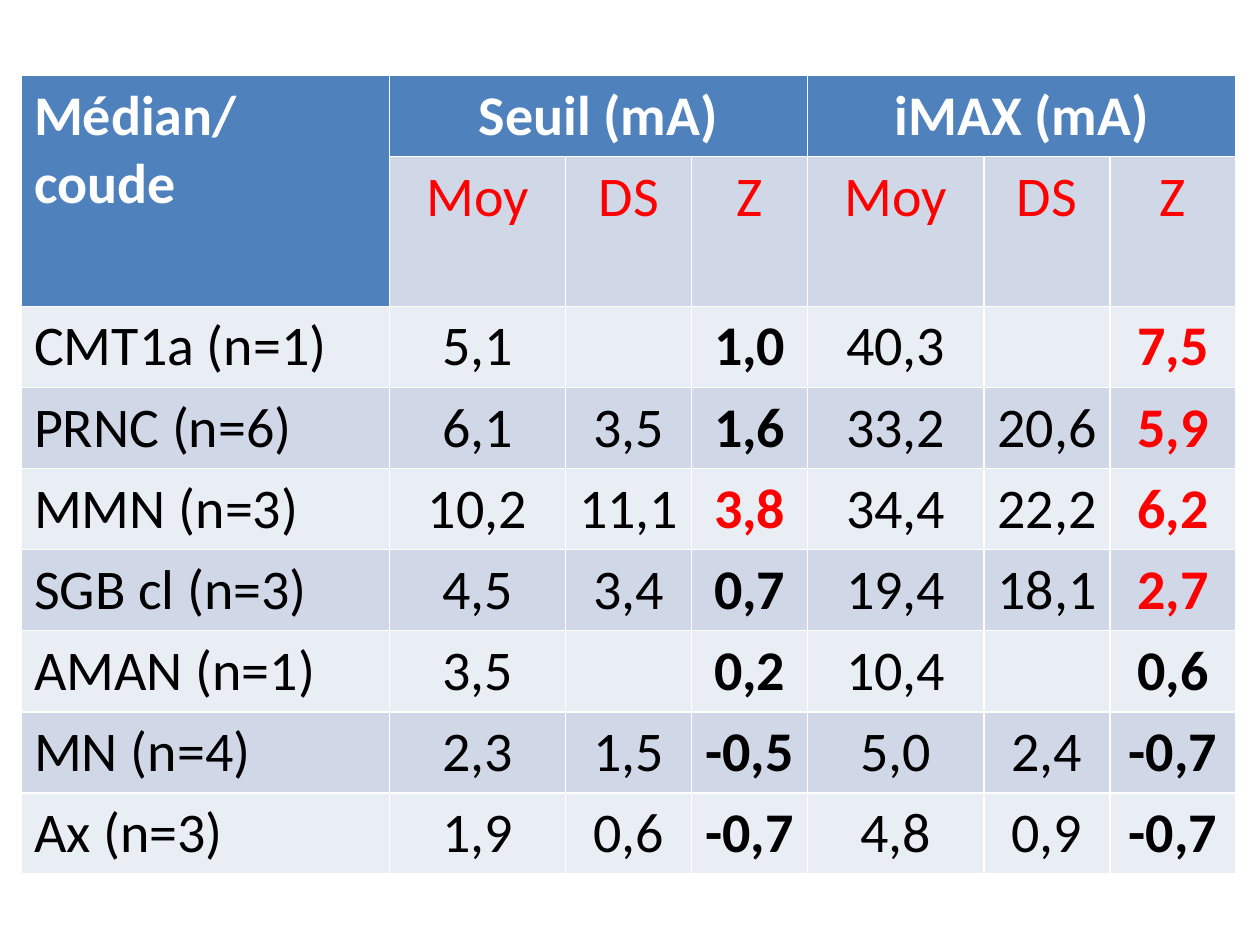
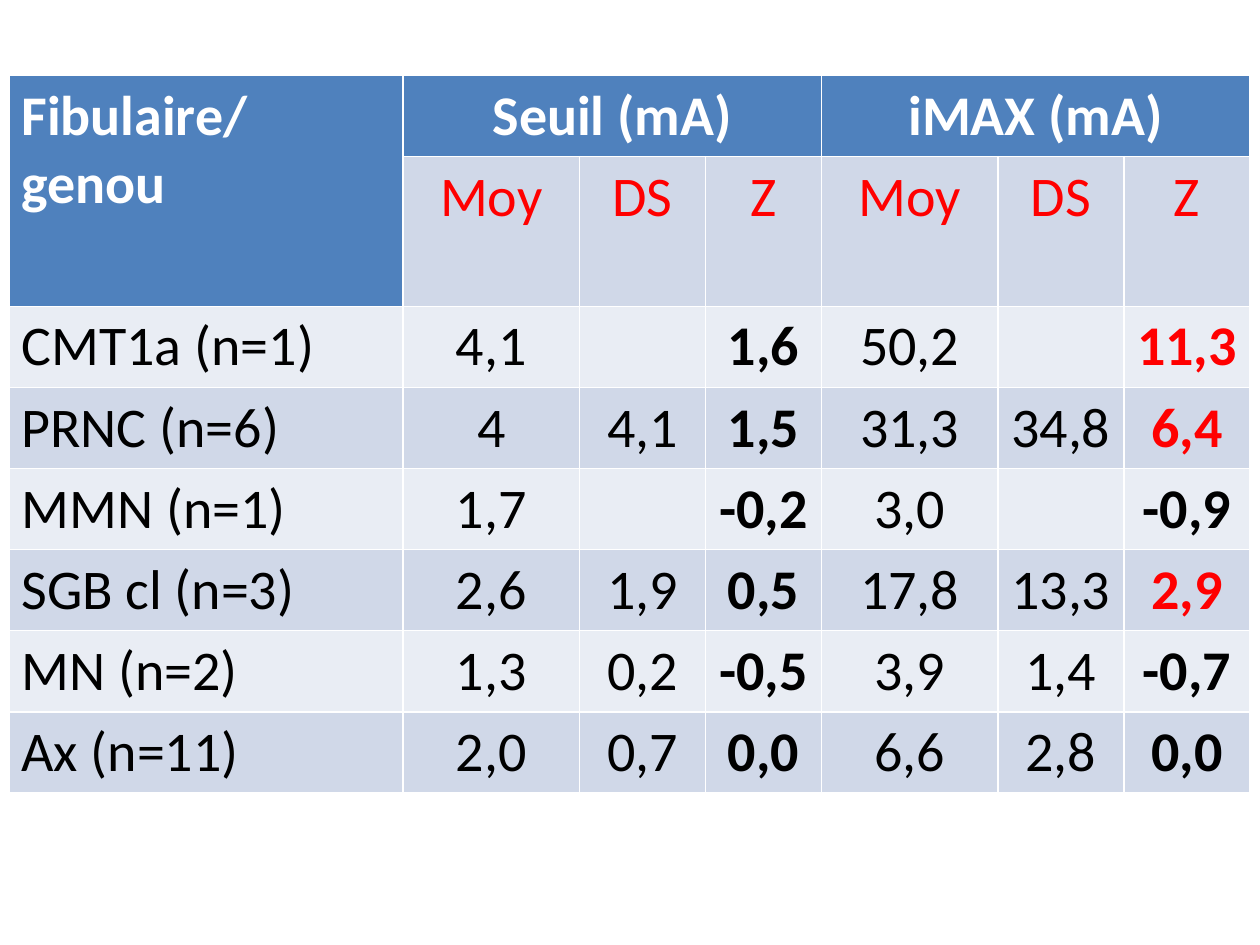
from pptx import Presentation
from pptx.dml.color import RGBColor as RGB
from pptx.enum.text import PP_ALIGN as Align
from pptx.util import Inches, Pt

BLUE = RGB(0x4F, 0x81, 0xBD)
DARK = RGB(0xD0, 0xD8, 0xE8)
LIGHT = RGB(0xE9, 0xED, 0xF4)
WHITE = RGB(0xFF, 0xFF, 0xFF)
BLACK = RGB(0, 0, 0)
RED = RGB(0xFF, 0, 0)

GROUPS = ("Seuil (mA)", "iMAX (mA)")
STATS = ("Moy", "DS", "Z")
Z_COLS = (3, 6)
Z_LIMIT = 2  # scores above this are abnormal
WIDTHS = (1.4, 1, 0.92, 1.4, 1, 1)
ROW = 0.41

# Group, then mean, SD and Z for threshold and for iMAX
MEDIAN = (
    ("CMT1a (n=1)", "5,1", "", "1,0", "40,3", "", "7,5"),
    ("PRNC (n=6)", "6,1", "3,5", "1,6", "33,2", "20,6", "5,9"),
    ("MMN (n=3)", "10,2", "11,1", "3,8", "34,4", "22,2", "6,2"),
    ("SGB cl (n=3)", "4,5", "3,4", "0,7", "19,4", "18,1", "2,7"),
    ("AMAN (n=1)", "3,5", "", "0,2", "10,4", "", "0,6"),
    ("MN (n=4)", "2,3", "1,5", "-0,5", "5,0", "2,4", "-0,7"),
    ("Ax (n=3)", "1,9", "0,6", "-0,7", "4,8", "0,9", "-0,7"),
)
FIBULAR = (
    ("CMT1a (n=1)", "4,1", "", "1,6", "50,2", "", "11,3"),
    ("PRNC (n=6)", "4", "4,1", "1,5", "31,3", "34,8", "6,4"),
    ("MMN (n=1)", "1,7", "", "-0,2", "3,0", "", "-0,9"),
    ("SGB cl (n=3)", "2,6", "1,9", "0,5", "17,8", "13,3", "2,9"),
    ("MN (n=2)", "1,3", "0,2", "-0,5", "3,9", "1,4", "-0,7"),
    ("Ax (n=11)", "2,0", "0,7", "0,0", "6,6", "2,8", "0,0"),
)


class Deck:
    def __init__(self):
        self.prs = Presentation()
        self.prs.slide_width = Inches(10)
        self.prs.slide_height = Inches(7.5)
        self.slide = None

    def page(self):
        self.slide = self.prs.slides.add_slide(self.prs.slide_layouts[6])

    def cell(self, cell, text, fill, color=BLACK, bold=False, align=Align.CENTER):
        cell.fill.solid()
        cell.fill.fore_color.rgb = fill
        cell.text_frame.text = text
        para = cell.text_frame.paragraphs[0]
        para.alignment = align
        for run in para.runs:
            font = run.font
            font.name, font.size = "Calibri", Pt(32)
            font.bold, font.color.rgb = bold, color

    def table(self, nerve, data, left, first, height):
        widths = (first, *WIDTHS)
        frame = self.slide.shapes.add_table(
            len(data) + 2, len(widths), Inches(left), Inches(0.6),
            Inches(sum(widths)), Inches(height))
        # The default table style draws the white rules
        grid = frame.table
        for col, width in zip(grid.columns, widths):
            col.width = Inches(width)
        for row in grid.rows:
            row.height = Inches(ROW)
        frame.height = Inches(height)

        # Two header rows
        grid.cell(0, 0).merge(grid.cell(1, 0))
        self.cell(grid.cell(0, 0), nerve, BLUE, WHITE, True, Align.LEFT)
        for i, group in enumerate(GROUPS):
            start = 1 + i * len(STATS)
            head = grid.cell(0, start)
            head.merge(grid.cell(0, start + len(STATS) - 1))
            self.cell(head, group, BLUE, WHITE, True)
            for j, stat in enumerate(STATS):
                self.cell(grid.cell(1, start + j), stat, DARK, RED)

        # Banded body rows, with high Z scores in red
        for r, values in enumerate(data):
            fill = DARK if r % 2 else LIGHT
            for c, text in enumerate(values):
                is_z = c in Z_COLS
                high = is_z and float(text.replace(",", ".")) > Z_LIMIT
                self.cell(grid.cell(r + 2, c), text, fill,
                          RED if high else BLACK, is_z,
                          Align.CENTER if c else Align.LEFT)


def main():
    deck = Deck()

    # Median nerve at the elbow
    deck.page()
    deck.table("Médian/coude", MEDIAN, 0.17, 2.92, 5.7)

    # Fibular nerve at the knee
    deck.page()
    deck.table("Fibulaire/genou", FIBULAR, 0.07, 3.13, 5.07)

    deck.prs.save("out.pptx")


if __name__ == "__main__":
    main()
